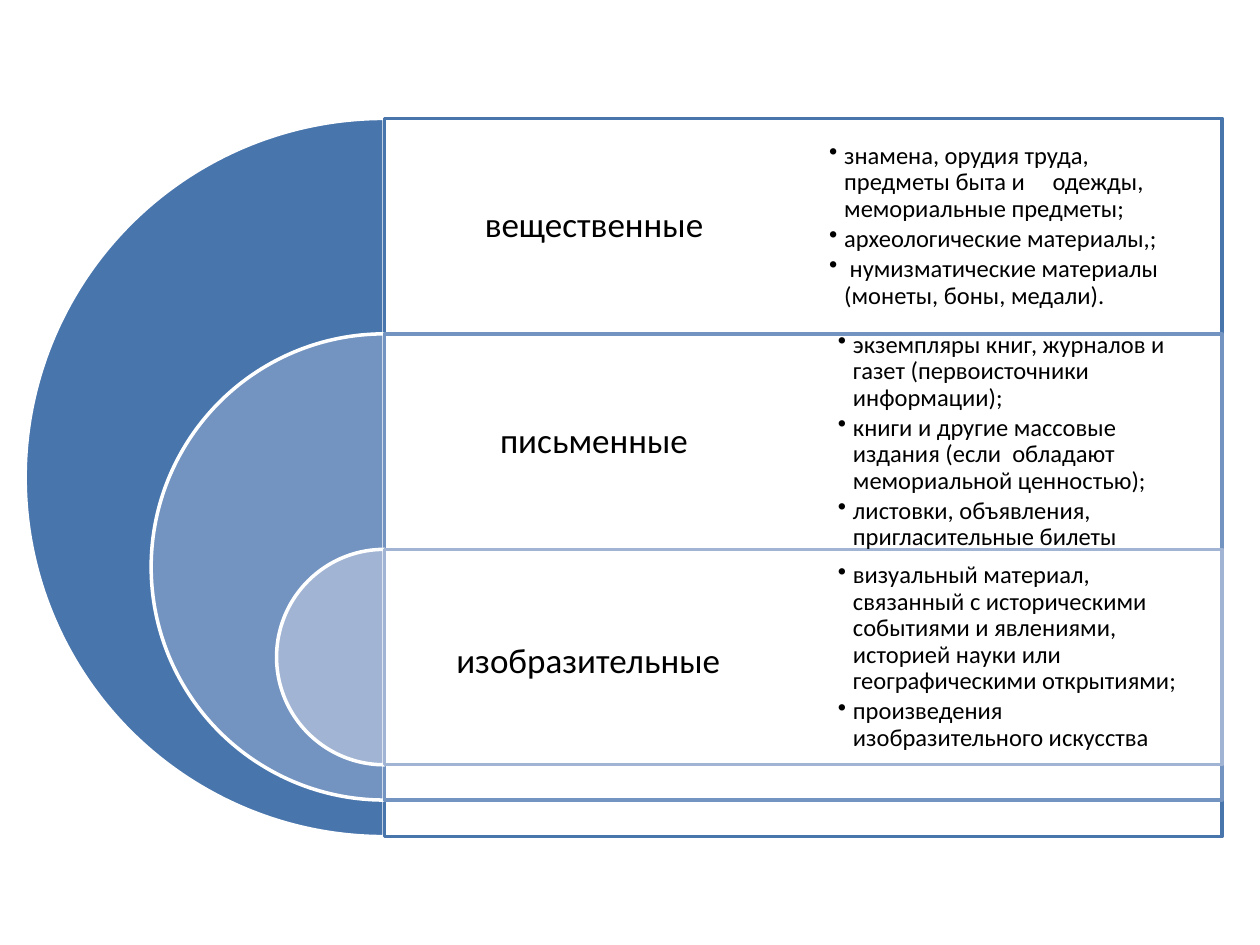
from lxml import etree
from pptx import Presentation
from pptx import util as u
from pptx.dml.color import RGBColor
from pptx.enum import shapes, text
from pptx.oxml.ns import qn

COLORS = {"outer": "4875AC", "middle": "7393C1", "inner": "A2B4D4",
          "white": "FFFFFF", "black": "000000"}
LEFT, TOP, ROW, COLUMN = 3.05, 0.94, 1.71, 3.33
HALF_CIRCLE = (54, 162)  # 90° to 270°, in units of 100000/60000 degrees
SOURCES = [
    # name, trailing space size, colour, diameter, detail left, detail width, details
    ("вещественные", None, "outer", 5.7, 6.31, 3.45, [
        "знамена, орудия труда, предметы быта и     одежды, мемориальные предметы;",
        "археологические материалы,;",
        " нумизматические материалы (монеты, боны, медали)."]),
    ("письменные", None, "middle", 3.7, LEFT + COLUMN, COLUMN, [
        "экземпляры книг, журналов и газет (первоисточники информации);",
        "книги и другие массовые издания (если  обладают мемориальной ценностью);",
        "листовки, объявления, пригласительные билеты"]),
    ("изобразительные", 29, "inner", ROW, LEFT + COLUMN, COLUMN, [
        "визуальный материал, связанный с историческими событиями и явлениями, "
        "историей науки или географическими открытиями;",
        "произведения изобразительного искусства"]),
]


def add_panel(kind, left, top, width, height, fill, line):
    shape = slide.shapes.add_shape(kind, *map(u.Inches, (left, top, width, height)))
    shape.shadow.inherit = False
    shape.fill.solid()
    shape.fill.fore_color.rgb = RGBColor.from_string(COLORS[fill])
    shape.line.color.rgb = RGBColor.from_string(COLORS[line])
    shape.line.width = u.Pt(2)
    return shape


def add_label(box, paragraphs, inset, size, bulleted=False):
    frame = slide.shapes.add_textbox(*map(u.Inches, box)).text_frame
    frame.word_wrap = True
    frame.vertical_anchor = text.MSO_ANCHOR.MIDDLE
    for side in ("left", "top", "right", "bottom"):
        setattr(frame, f"margin_{side}", u.Inches(inset))
    frame.text = "\n".join(paragraphs)
    for paragraph in frame.paragraphs:
        if bulleted:
            properties = paragraph._p.get_or_add_pPr()
            properties.set("marL", str(u.Inches(0.12)))
            properties.set("indent", str(-u.Inches(0.12)))
            etree.SubElement(properties, qn("a:buChar"), char="•")
        paragraph.alignment = text.PP_ALIGN.LEFT if bulleted else text.PP_ALIGN.CENTER
        paragraph.line_spacing = 0.9
        paragraph.space_after = u.Pt(2.1 if bulleted else 0)
        for run in paragraph.runs:
            for name, value in {"name": "Calibri", "size": u.Pt(size)}.items():
                setattr(run.font, name, value)
            run.font.color.rgb = RGBColor.from_string(COLORS["black"])
    return frame


presentation = Presentation()
presentation.slide_width, presentation.slide_height = u.Inches(10), u.Inches(7.5)
slide = presentation.slides.add_slide(presentation.slide_layouts[6])

for row, (name, space_size, color, diameter, *_) in enumerate(SOURCES):
    top = TOP + row * ROW
    pie = add_panel(shapes.MSO_SHAPE.PIE, LEFT - diameter / 2, top,
                    diameter, diameter, color, "white")
    for index, angle in enumerate(HALF_CIRCLE):
        pie.adjustments[index] = angle
    panel = add_panel(shapes.MSO_SHAPE.RECTANGLE, LEFT, top,
                      2 * COLUMN - 0.01, diameter, "white", color)
    fill_color = panel._element.spPr.find(qn("a:solidFill"))[0]
    etree.SubElement(fill_color, qn("a:alpha"), val="90000")
    frame = add_label((LEFT, top, COLUMN, ROW), [name], 0.08, 20)
    if space_size:
        run = frame.paragraphs[0].add_run()
        run.text = " "
        run.font.name, run.font.size = "Calibri", u.Pt(space_size)

for row, (*_, left, width, details) in enumerate(SOURCES):
    add_label((left, TOP + row * ROW, width, ROW), details, 0.27, 14, bulleted=True)

presentation.save("out.pptx")
